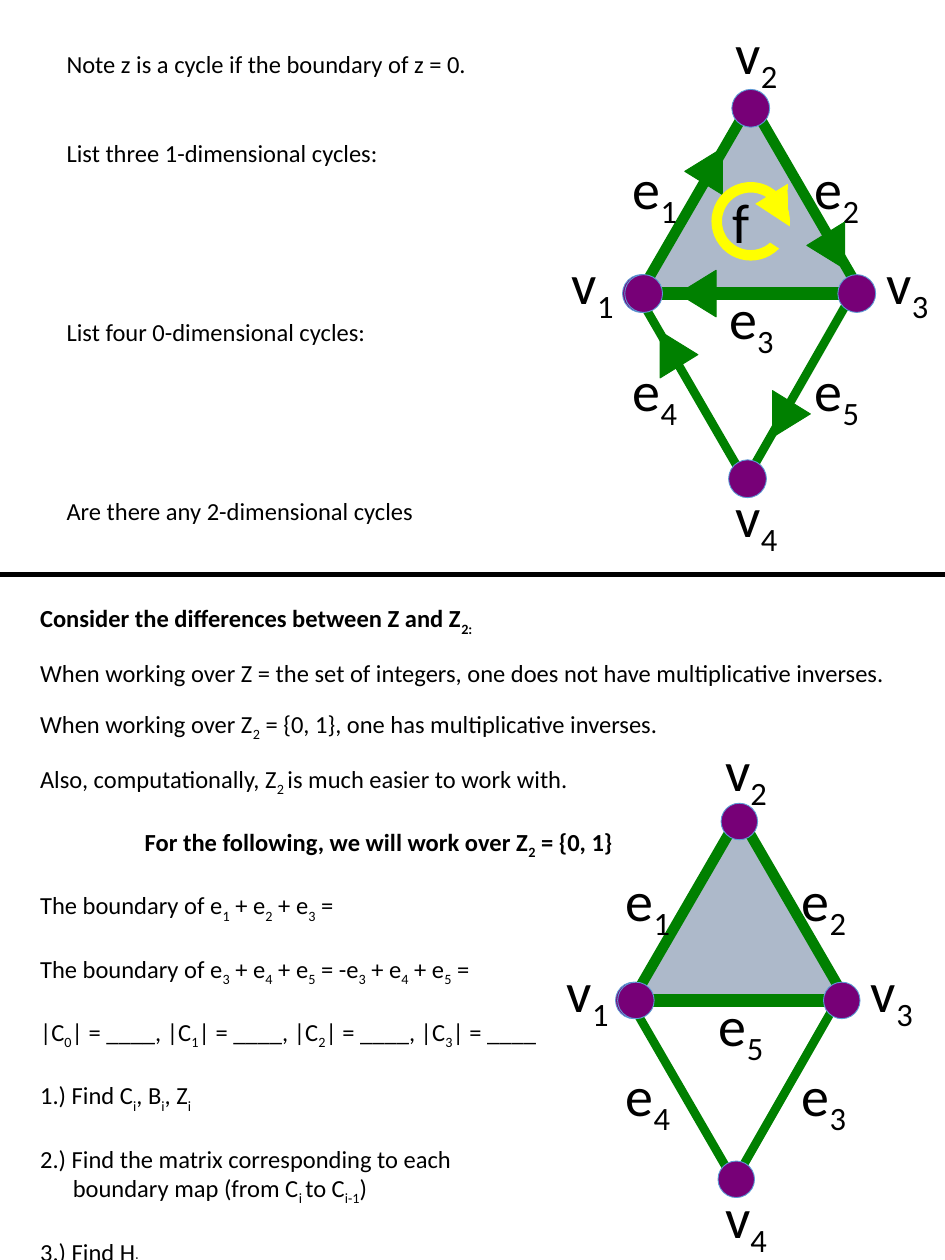
"""Worksheet slide on cycles and boundaries in a small simplicial complex."""
from pptx import Presentation, util as u
from pptx.dml.color import RGBColor
from pptx.enum import shapes, text
from pptx.oxml.ns import qn
from lxml import etree

BLACK = RGBColor(0x00, 0x00, 0x00)
GREEN = RGBColor(0x00, 0x80, 0x00)
PURPLE = RGBColor(0x77, 0x00, 0x77)
BLUE = RGBColor(0x5B, 0x9B, 0xD5)
GRAY = RGBColor(0xAD, 0xB9, 0xCA)
YELLOW = RGBColor(0xFF, 0xFF, 0x00)
FONT = "Calibri"
WIDTH, HEIGHT = 7.5, 10
LINE = 17.1
SMALL = 12.2

# Paragraphs: text with subscripts between tildes, bold, space before, indent
QUESTIONS = [
    ("Note z is a cycle if the boundary of z = 0.", False, 0, 0),
    ("List three 1-dimensional cycles:", False, 2 * LINE, 0),
    ("List four 0-dimensional cycles:", False, 5 * LINE, 0),
    ("Are there any 2-dimensional cycles", False, 5 * LINE, 0),
]
EXERCISES = [
    ("Consider the differences between Z and Z~2:~", True, 0, 0),
    ("When working over Z = the set of integers, one does not have "
     "multiplicative inverses.", False, SMALL, 0),
    ("When working over Z~2~ = {0, 1}, one has multiplicative inverses.", False, SMALL, 0),
    ("Also, computationally, Z~2 ~is much easier to work with.", False, SMALL, 0),
    ("For the following, we will work over Z~2~ = {0, 1}", True, LINE, 0.83),
    ("The boundary of e~1~ + e~2~ + e~3~ =", False, LINE, 0),
    ("The boundary of e~3~ + e~4~ + e~5~ = -e~3~ + e~4~ + e~5~ =", False, LINE, 0),
    ("|C~0~| = ____, |C~1~| = ____, |C~2~| = ____, |C~3~| = ____", False, LINE, 0),
    ("1.) Find C~i~, B~i~, Z~i~", False, LINE, 0),
    ("2.) Find the matrix corresponding to each", False, LINE, 0),
    ("boundary map (from C~i ~to C~i-1~)", False, 0, 0.26),
    ("3.) Find H~i~", False, LINE, 0),
]

COL, ROW = 0.85, 1.47
EDGES = [((-0.09, 0.96), (-0.99, 0.06)), ((0.89, 0.07), (0, 0.97)),
         ((0.93, 0.01), (-0.86, 0.01))]
VERTICES = [(-1.01, 0), (-0.99, 0), (1, 0), (0.01, -1), (-0.02, 1)]
LABEL_SPOTS = [(-0.79, -0.57), (0.91, -0.57), (0.11, 0.13), (-0.79, 0.52), (0.91, 0.52),
               (-1.36, -0.06), (0.17, -1.3), (1.58, -0.06), (0.17, 1.2)]
VERTEX_LABELS = ["v~1~", "v~2~", "v~3~", "v~4~"]
DIAGRAMS = [
    (5.95, 2.33, 1, ["e~1~", "e~2~", "e~3~", "e~4~", "e~5~"]),
    (5.86, 7.94, 0.966, ["e~1~", "e~2~", "e~5~", "e~4~", "e~3~"]),
]
ARROWS = [((-0.49, 0), 270), ((0.39, 0.65), 90), ((-0.66, 0.33), 90),
          ((0.71, -0.26), 270), ((-0.43, -0.66), 270)]

prs = Presentation()
prs.slide_width, prs.slide_height = u.Inches(WIDTH), u.Inches(HEIGHT)
s = prs.slides.add_slide(prs.slide_layouts[6])


def add_text(left, top, width, height, paragraphs, size):
    tf = s.shapes.add_textbox(*map(u.Inches, (left, top, width, height))).text_frame
    tf.word_wrap = True
    tf.auto_size = text.MSO_AUTO_SIZE.NONE
    for i, (words, bold, before, indent) in enumerate(paragraphs):
        p = tf.paragraphs[0] if i == 0 else tf.add_paragraph()
        p.space_before = u.Pt(before)
        if indent:
            p._p.get_or_add_pPr().set("marL", str(u.Inches(indent)))
        for j, part in enumerate(words.split("~")):
            if part:
                r = p.add_run()
                r.text = part
                r.font.name, r.font.size, r.font.bold = FONT, u.Pt(size), bold
                r.font.color.rgb = BLACK
                if j % 2:
                    r._r.get_or_add_rPr().set("baseline", "-25000")


def add_line(start, end, color, weight):
    ln = s.shapes.add_connector(shapes.MSO_CONNECTOR.STRAIGHT,
                                *map(u.Inches, (*start, *end)))
    ln.line.color.rgb, ln.line.width = color, u.Pt(weight)
    etree.SubElement(ln._element.spPr, qn("a:effectLst"))


def add_shape(kind, center, width, height, fill, outline, weight, rotation=0):
    sp = s.shapes.add_shape(kind, *map(u.Inches, (
        center[0] - width / 2, center[1] - height / 2, width, height)))
    sp.shadow.inherit = False
    sp.rotation = rotation
    if fill is None:
        sp.fill.background()
    else:
        sp.fill.solid()
        sp.fill.fore_color.rgb = fill
    sp.line.color.rgb, sp.line.width = outline, u.Pt(weight)


def add_label(center, words, width, height):
    add_text(center[0] - width / 2, center[1] - height / 2, width, height,
             [(words, False, 0, 0)], 32)


def add_complex(x, y, scale, edge_labels):
    def at(spot):
        return x + spot[0] * COL * scale, y + spot[1] * ROW * scale

    for start, end in EDGES:
        add_line(at(start), at(end), GREEN, 5)
    add_shape(TRIANGLE, at((0.01, -0.52)), 1.75 * scale, 1.51 * scale, GRAY, GREEN, 6)
    for spot in VERTICES:
        add_shape(OVAL, at(spot), 0.3 * scale, 0.3 * scale, PURPLE, BLUE, 0.5)
    for spot, words in zip(LABEL_SPOTS, edge_labels + VERTEX_LABELS):
        add_label(at(spot), words, 0.71 * scale, 0.64 * scale)
    return at


TRIANGLE = shapes.MSO_SHAPE.ISOSCELES_TRIANGLE
OVAL = shapes.MSO_SHAPE.OVAL

add_text(0.43, 0.34, 4.74, 4.41, QUESTIONS, 14)
at = add_complex(*DIAGRAMS[0])
for spot, rotation in ARROWS:
    add_shape(TRIANGLE, at(spot), 0.37, 0.3, GREEN, GREEN, 0.5, rotation)
add_shape(OVAL, at((0.01, -0.39)), 0.54, 0.54, None, YELLOW, 6)
add_shape(TRIANGLE, at((0.2, -0.48)), 0.32, 0.26, YELLOW, YELLOW, 0.5, 270)
add_line(at((-0.09, -0.46)), at((0.49, -0.24)), GRAY, 13.75)
add_line(at((0.39, -0.37)), at((0.36, -0.56)), GRAY, 1)
add_label(at((-0.06, -0.39)), "f", 0.36, 0.64)

add_line((0, 4.56), (WIDTH, 4.56), BLACK, 3)
add_text(0.22, 4.74, 7.03, 5.32, EXERCISES, 14)
add_complex(*DIAGRAMS[1])

prs.save("out.pptx")
